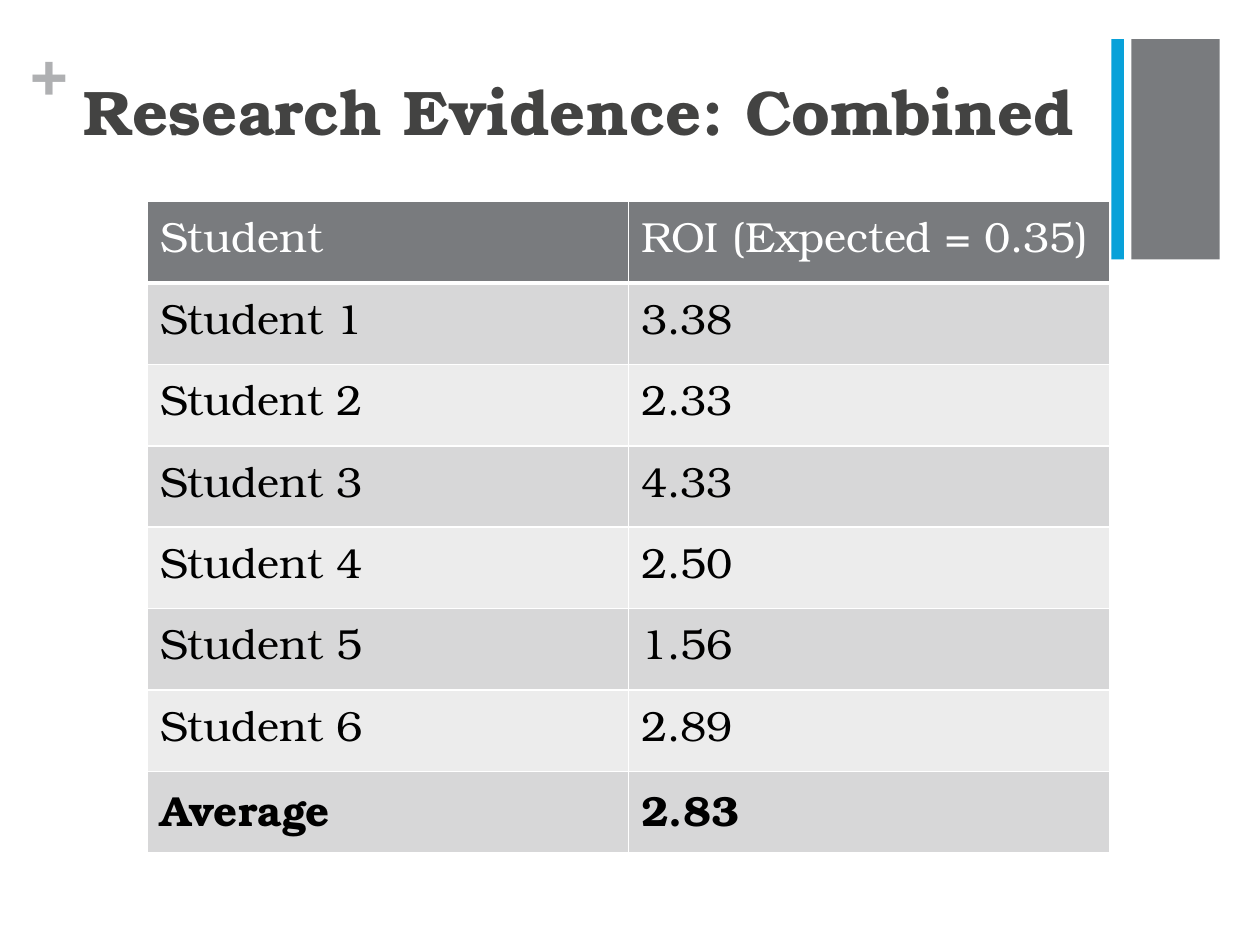
import pptx
import pptx.dml.color
import pptx.enum.shapes
import pptx.enum.text
import pptx.oxml
import pptx.oxml.ns
import pptx.util
from dataclasses import dataclass

Inches = pptx.util.Inches
Pt = pptx.util.Pt
RGB = pptx.dml.color.RGBColor.from_string
PP_ALIGN = pptx.enum.text.PP_ALIGN


@dataclass(frozen=True)
class Theme:
    font: str = "TeX Gyre Bonum"
    title_size: int = 36
    table_size: int = 24
    title: str = "434342"
    plus: str = "AFB0B2"
    gray: str = "797B7E"
    blue: str = "08A1D9"
    white: str = "FFFFFF"
    black: str = "000000"
    bands: tuple = ("D7D7D8", "ECECEC")


THEME = Theme()

ROWS = [
    ("Student", "ROI (Expected = 0.35)"),
    ("Student 1", "3.38"),
    ("Student 2", "2.33"),
    ("Student 3", "4.33"),
    ("Student 4", "2.50"),
    ("Student 5", "1.56"),
    ("Student 6", "2.89"),
    ("Average", "2.83"),
]


def style_paragraph(p, size, color, bold=False):
    p.font.name = THEME.font
    p.font.size = Pt(size)
    p.font.bold = bold
    p.font.color.rgb = RGB(color)


def add_bar(slide, left, width, color):
    sp = slide.shapes.add_shape(
        pptx.enum.shapes.MSO_SHAPE.RECTANGLE,
        Inches(left), Inches(0.31), Inches(width), Inches(1.75))
    sp.shadow.inherit = False
    sp.fill.solid()
    sp.fill.fore_color.rgb = RGB(color)
    sp.line.fill.background()


def add_heading(slide, text, box, color, align=PP_ALIGN.LEFT, inset=True):
    sp = slide.shapes.add_textbox(*map(Inches, box))
    tf = sp.text_frame
    tf.word_wrap = True
    if not inset:
        tf.margin_left = tf.margin_right = tf.margin_top = tf.margin_bottom = 0
    p = tf.paragraphs[0]
    p.text = text
    p.alignment = align
    style_paragraph(p, THEME.title_size, color, bold=True)


def set_borders(cell, bottom):
    """Draw white cell edges, 1 pt wide except for the given bottom width."""
    tc_pr = cell._tc.get_or_add_tcPr()
    edges = (("lnL", 1), ("lnR", 1), ("lnT", 1), ("lnB", bottom))
    for position, (tag, width) in enumerate(edges):
        tc_pr.insert(position, pptx.oxml.parse_xml(
            f'<a:{tag} {pptx.oxml.ns.nsdecls("a")} w="{Pt(width)}">'
            f'<a:solidFill><a:srgbClr val="{THEME.white}"/></a:solidFill>'
            f'</a:{tag}>'))


def add_results_table(slide, rows):
    table = slide.shapes.add_table(
        len(rows), len(rows[0]),
        Inches(1.17), Inches(1.6), Inches(7.64), Inches(5.17)).table
    for i, values in enumerate(rows):
        header = i == 0
        fill = THEME.gray if header else THEME.bands[(i - 1) % 2]
        color = THEME.white if header else THEME.black
        for j, value in enumerate(values):
            cell = table.cell(i, j)
            cell.fill.solid()
            cell.fill.fore_color.rgb = RGB(fill)
            set_borders(cell, bottom=3 if header else 1)
            p = cell.text_frame.paragraphs[0]
            p.text = value
            style_paragraph(p, THEME.table_size, color, bold=i == len(rows) - 1)


def main():
    prs = pptx.Presentation()
    prs.slide_width = Inches(10)
    prs.slide_height = Inches(7.5)
    slide = prs.slides.add_slide(prs.slide_layouts[6])
    add_bar(slide, 8.98, 0.7, THEME.gray)
    add_heading(slide, "+", (0.24, 0.25, 0.29, 0.61), THEME.plus, inset=False)
    add_bar(slide, 8.82, 0.1, THEME.blue)
    add_heading(slide, "Research Evidence: Combined ", (0.55, 0.53, 8.26, 1.22),
                THEME.title, PP_ALIGN.CENTER)
    add_results_table(slide, ROWS)
    prs.save("out.pptx")


if __name__ == "__main__":
    main()
